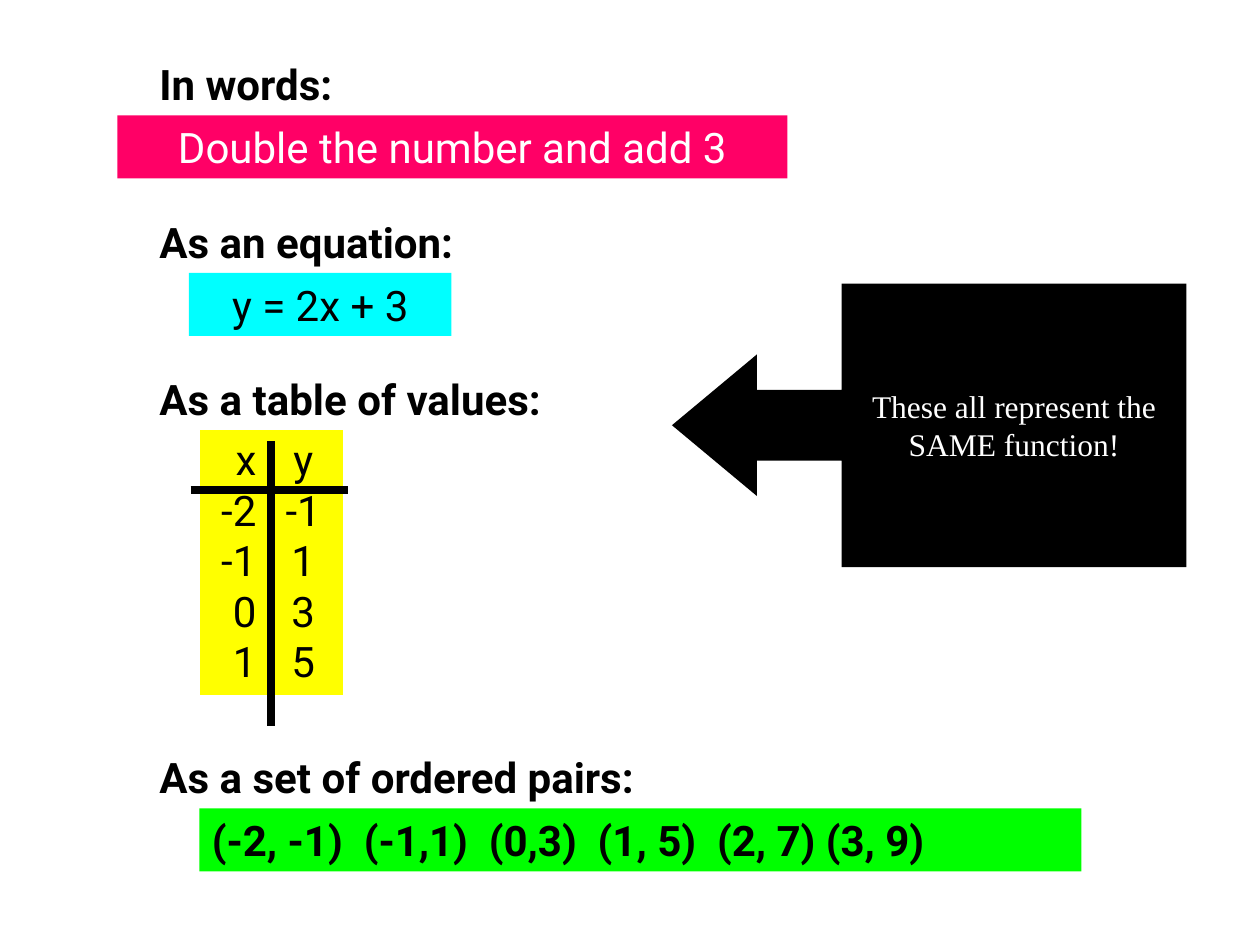
from dataclasses import dataclass

from lxml import etree
from pptx import Presentation
from pptx.dml.color import RGBColor
from pptx.enum.shapes import MSO_CONNECTOR, MSO_SHAPE
from pptx.enum.text import MSO_ANCHOR, MSO_AUTO_SIZE, PP_ALIGN
from pptx.oxml.ns import qn
from pptx.util import Pt

LEFT, CENTER, RIGHT = PP_ALIGN.LEFT, PP_ALIGN.CENTER, PP_ALIGN.RIGHT
TOP, MIDDLE = MSO_ANCHOR.TOP, MSO_ANCHOR.MIDDLE
FIT_SHAPE = MSO_AUTO_SIZE.SHAPE_TO_FIT_TEXT
RECT, CALLOUT = MSO_SHAPE.RECTANGLE, MSO_SHAPE.LEFT_ARROW_CALLOUT
STRAIGHT = MSO_CONNECTOR.STRAIGHT
PLAIN_TABLE_STYLE = "{2D5ABB26-0587-4C30-8999-92F81FD0307C}"


@dataclass(frozen=True)
class Theme:
    black: RGBColor = RGBColor(0, 0, 0)
    white: RGBColor = RGBColor(255, 255, 255)
    pink: RGBColor = RGBColor(255, 0, 102)
    cyan: RGBColor = RGBColor(0, 255, 255)
    yellow: RGBColor = RGBColor(255, 255, 0)
    green: RGBColor = RGBColor(0, 255, 0)
    font: str = "Roboto"
    callout_font: str = "Times New Roman"
    size: int = 24
    callout_size: int = 18
    rule_width: float = 4.5


THEME = Theme()
HEADING_LEFT, ROW_HEIGHT = 84, 36
VALUES = [("x", "y"), ("-2", "-1"), ("-1", "1"), ("0", "3"), ("1", "5")]


def write(tf, text, color=THEME.black, align=LEFT, bold=False,
          font=THEME.font, size=THEME.size):
    p = tf.paragraphs[0]
    p.alignment = align
    r = p.add_run()
    r.text = text
    r.font.name, r.font.size, r.font.bold = font, Pt(size), bold
    r.font.color.rgb = color


def add_heading(slide, text, top, width):
    tf = slide.shapes.add_textbox(
        Pt(HEADING_LEFT), Pt(top), Pt(width), Pt(ROW_HEIGHT)).text_frame
    tf.word_wrap = True
    tf.auto_size = FIT_SHAPE
    write(tf, text, bold=True)


def add_filled(slide, kind, left, top, width, height, fill):
    sp = slide.shapes.add_shape(kind, Pt(left), Pt(top), Pt(width), Pt(height))
    sp.shadow.inherit = False
    sp.fill.solid()
    sp.fill.fore_color.rgb = fill
    sp.line.fill.background()
    sp.text_frame.word_wrap = True
    return sp


def add_answer(slide, text, left, top, width, fill, **style):
    tf = add_filled(slide, RECT, left, top, width, ROW_HEIGHT, fill).text_frame
    tf.vertical_anchor = TOP
    tf.auto_size = FIT_SHAPE
    write(tf, text, **style)


def add_value_table(slide, left, top, width):
    """Table whose first and last rows carry the box's outer padding."""
    line, pad = 28.8, 3.6
    last = len(VALUES) - 1
    table = slide.shapes.add_table(
        len(VALUES), 2, Pt(left), Pt(top), Pt(width),
        Pt(line * len(VALUES) + 2 * pad)).table
    table.first_row = table.horz_banding = False
    table._tbl.tblPr.find(qn("a:tableStyleId")).text = PLAIN_TABLE_STYLE
    for col in table.columns:
        col.width = Pt(width / 2)
    columns = [(RIGHT, 8.5), (CENTER, 4.5)]
    for i, values in enumerate(VALUES):
        table.rows[i].height = Pt(line + (pad if i in (0, last) else 0))
        for j, (value, (align, inset)) in enumerate(zip(values, columns)):
            cell = table.cell(i, j)
            cell.fill.solid()
            cell.fill.fore_color.rgb = THEME.yellow
            cell.margin_left = cell.margin_bottom = 0
            cell.margin_right = Pt(inset)
            cell.margin_top = Pt(pad if i == 0 else 0)
            write(cell.text_frame, value, align=align)


def add_rule(slide, x1, y1, x2, y2):
    rule = slide.shapes.add_connector(STRAIGHT, Pt(x1), Pt(y1), Pt(x2), Pt(y2))
    rule.line.color.rgb = THEME.black
    rule.line.width = Pt(THEME.rule_width)
    etree.SubElement(rule._element.spPr, qn("a:effectLst"))


def add_callout(slide, text, left, top, width, height):
    sp = add_filled(slide, CALLOUT, left, top, width, height, THEME.black)
    for i, value in enumerate((0.25, 0.25, 0.3, 0.67)):
        sp.adjustments[i] = value
    sp.text_frame.vertical_anchor = MIDDLE
    write(sp.text_frame, text, color=THEME.white, align=CENTER,
          font=THEME.callout_font, size=THEME.callout_size)


def main():
    prs = Presentation()
    prs.slide_width, prs.slide_height = Pt(720), Pt(540)
    slide = prs.slides.add_slide(prs.slide_layouts[6])

    words, equation, values, pairs = 30, 120, 210, 426
    add_value_table(slide, 114, values + ROW_HEIGHT, 82)
    add_rule(slide, 155, 252, 155, 415)
    add_rule(slide, 109, 280, 199, 280)

    add_heading(slide, "In words:", words, 564)
    add_answer(slide, "Double the number and add 3", 67, words + ROW_HEIGHT,
               383, THEME.pink, color=THEME.white, align=CENTER)
    add_heading(slide, "As an equation:", equation, 210)
    add_answer(slide, "y = 2x + 3", 108, equation + ROW_HEIGHT,
               150, THEME.cyan, align=CENTER)
    add_heading(slide, "As a table of values:", values, 264)
    add_heading(slide, "As a set of ordered pairs:", pairs, 318)
    add_answer(slide, "(-2, -1)  (-1,1)  (0,3)  (1, 5)  (2, 7) (3, 9)", 114,
               pairs + ROW_HEIGHT, 504, THEME.green, bold=True)
    add_callout(slide, "These all represent the SAME function!",
                384, 162, 294, 162)
    prs.save("out.pptx")


if __name__ == "__main__":
    main()
